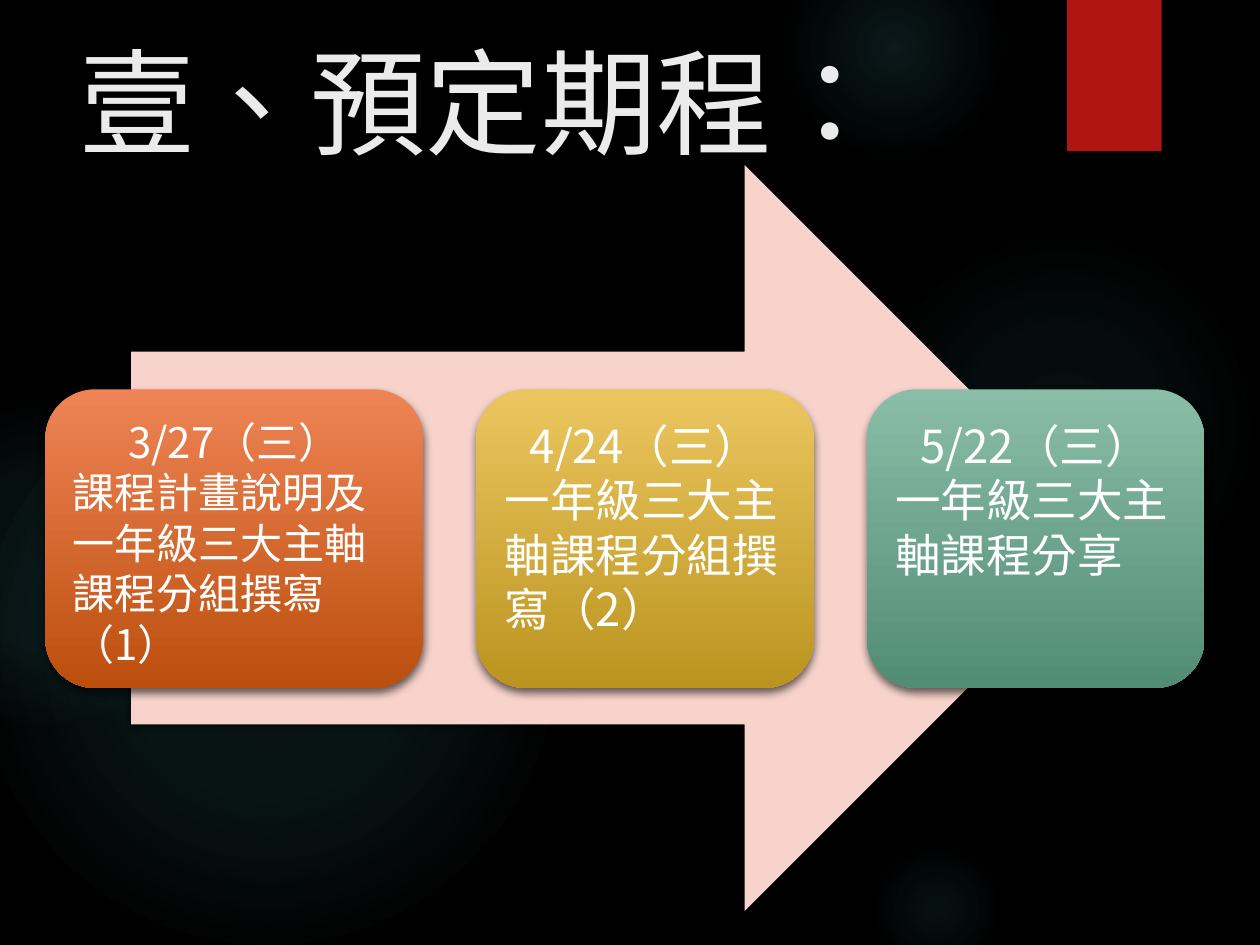
"""Build the planned schedule slide: three dated sessions along an arrow."""
from typing import NamedTuple

from lxml.etree import SubElement
from pptx import Presentation
from pptx.dml.color import RGBColor
from pptx.enum.shapes import MSO_SHAPE as Preset
from pptx.enum.text import MSO_ANCHOR as Anchor, PP_ALIGN as Align
from pptx.oxml import parse_xml
from pptx.oxml.ns import nsdecls, qn
from pptx.util import Emu, Pt

EMU_PER_PX = 9144
BLACK = RGBColor(0x00, 0x00, 0x00)
WHITE = RGBColor(0xFF, 0xFF, 0xFF)
TITLE_GREY = RGBColor(0xEB, 0xEB, 0xEB)
GLOW_TEAL = RGBColor(0x50, 0xB9, 0xC1)
RIBBON_RED = RGBColor(0xB0, 0x15, 0x13)
ARROW_PINK = RGBColor(0xF7, 0xD3, 0xCC)
ORANGE = RGBColor(0xEE, 0x84, 0x55), RGBColor(0xBC, 0x4F, 0x0E)
GOLD = RGBColor(0xEB, 0xC6, 0x5F), RGBColor(0xBB, 0x94, 0x1F)
GREEN = RGBColor(0x89, 0xBD, 0xA7), RGBColor(0x53, 0x8C, 0x74)
SANS, SANS_TC = "Noto Sans CJK SC", "Noto Sans CJK TC"
LANGUAGE = "zh-TW"
CARD_TOP, CARD_HEIGHT = 309, 237


class Box(NamedTuple):
    left: int
    top: int
    width: int
    height: int


class Stop(NamedTuple):
    position: int
    color: RGBColor
    opacity: int = 100


class Shadow(NamedTuple):
    opacity: int
    blur: int
    distance: int


class Glow(NamedTuple):
    left: int
    top: int
    size: int
    opacities: tuple[int, int]
    fade_end: int


class Session(NamedTuple):
    left: int
    width: int
    colors: tuple[RGBColor, RGBColor]
    date: str
    topic: str
    size: int
    inset: int


FLAT_SHADOW = Shadow(45, 3, 2)
CARD_SHADOW = Shadow(60, 5, 3)
GLOWS = (
    Glow(689, 183, 308, (7, 6), 69),
    Glow(622, -50, 175, (14, 7), 73),
    Glow(689, 667, 108, (9, 5), 66),
    Glow(-17, 292, 458, (11, 10), 75),
    Glow(-92, 317, 258, (8, 8), 72),
)
SESSIONS = (
    Session(36, 300, ORANGE, "3/27（三）", "課程計畫說明及一年級三大主軸課程分組撰寫（1）", 24, 10),
    Session(378, 268, GOLD, "4/24（三）", "一年級三大主軸課程分組撰寫（2）", 26, 11),
    Session(688, 268, GREEN, "5/22（三）", "一年級三大主軸課程分享", 26, 11),
)
TITLE = (("壹", SANS), ("、", SANS_TC), ("預定期程：", SANS))


def px(length: int) -> Emu:
    return Emu(length * EMU_PER_PX)


def add_preset(slide, preset: Preset, box: Box):
    shape = slide.shapes.add_shape(preset, *map(px, box))
    shape.shadow.inherit = False
    shape.line.fill.background()
    return shape


def fill_gradient(shape, stops: list[Stop], direction: str) -> None:
    stop_xml = "".join(
        f'<a:gs pos="{stop.position * 1000}"><a:srgbClr val="{stop.color}">'
        f'<a:alpha val="{stop.opacity * 1000}"/></a:srgbClr></a:gs>'
        for stop in stops
    )
    gradient = parse_xml(
        f'<a:gradFill {nsdecls("a")} rotWithShape="1">'
        f"<a:gsLst>{stop_xml}</a:gsLst>{direction}</a:gradFill>"
    )
    shape.fill.background()
    properties = shape._element.spPr
    properties.replace(properties.find(qn("a:noFill")), gradient)


def cast_shadow(shape, shadow: Shadow) -> None:
    effects = shape._element.spPr.find(qn("a:effectLst"))
    outer = SubElement(
        effects, qn("a:outerShdw"), blurRad=str(Pt(shadow.blur)),
        dist=str(Pt(shadow.distance)), dir="5400000", rotWithShape="0",
    )
    color = SubElement(outer, qn("a:srgbClr"), val=str(BLACK))
    SubElement(color, qn("a:alpha"), val=str(shadow.opacity * 1000))


def style_run(run, size: int, color: RGBColor, typeface: str) -> None:
    run.font.size = Pt(size)
    run.font.color.rgb = color
    run.font.name = typeface
    run.font._element.set("lang", LANGUAGE)
    SubElement(run.font._element, qn("a:ea"), typeface=typeface)


def draw_glow(slide, glow: Glow) -> None:
    circle = add_preset(slide, Preset.OVAL, Box(glow.left, glow.top, glow.size, glow.size))
    center, middle = glow.opacities
    stops = [
        Stop(0, GLOW_TEAL, center),
        Stop(36, GLOW_TEAL, middle),
        Stop(glow.fade_end, GLOW_TEAL, 0),
    ]
    fill_gradient(
        circle, stops,
        '<a:path path="circle"><a:fillToRect l="50000" t="50000" r="50000" b="50000"/></a:path>',
    )


def draw_solid(slide, preset: Preset, box: Box, color: RGBColor) -> None:
    solid = add_preset(slide, preset, box)
    solid.fill.solid()
    solid.fill.fore_color.rgb = color
    cast_shadow(solid, FLAT_SHADOW)


def draw_title(slide, box: Box) -> None:
    frame = slide.shapes.add_textbox(*map(px, box)).text_frame
    frame.word_wrap = True
    frame.vertical_anchor = Anchor.MIDDLE
    for text, typeface in TITLE:
        run = frame.paragraphs[0].add_run()
        run.text = text
        style_run(run, 66, TITLE_GREY, typeface)


def draw_session(slide, session: Session) -> None:
    card = add_preset(
        slide, Preset.ROUNDED_RECTANGLE,
        Box(session.left, CARD_TOP, session.width, CARD_HEIGHT),
    )
    top_color, bottom_color = session.colors
    fill_gradient(card, [Stop(0, top_color), Stop(100, bottom_color)], '<a:lin ang="5400000" scaled="0"/>')
    cast_shadow(card, CARD_SHADOW)
    frame = card.text_frame
    frame.word_wrap = True
    frame.vertical_anchor = Anchor.TOP
    frame.margin_left = frame.margin_right = px(session.inset)
    frame.margin_top = frame.margin_bottom = px(session.inset)
    frame.text = f"{session.date}\n{session.topic}"
    for paragraph, alignment in zip(frame.paragraphs, (Align.CENTER, Align.LEFT)):
        paragraph.alignment = alignment
        paragraph.line_spacing = 1.0
        style_run(paragraph.runs[0], session.size, WHITE, SANS)


def main() -> None:
    deck = Presentation()
    deck.slide_width, deck.slide_height = px(1000), px(750)
    slide = deck.slides.add_slide(deck.slide_layouts[6])
    slide.background.fill.solid()
    slide.background.fill.fore_color.rgb = BLACK
    for glow in GLOWS:
        draw_glow(slide, glow)
    draw_solid(slide, Preset.RECTANGLE, Box(847, 0, 75, 120), RIBBON_RED)
    draw_title(slide, Box(53, 21, 772, 118))
    draw_solid(slide, Preset.RIGHT_ARROW, Box(104, 131, 783, 592), ARROW_PINK)
    for session in SESSIONS:
        draw_session(slide, session)
    deck.save("out.pptx")


if __name__ == "__main__":
    main()
